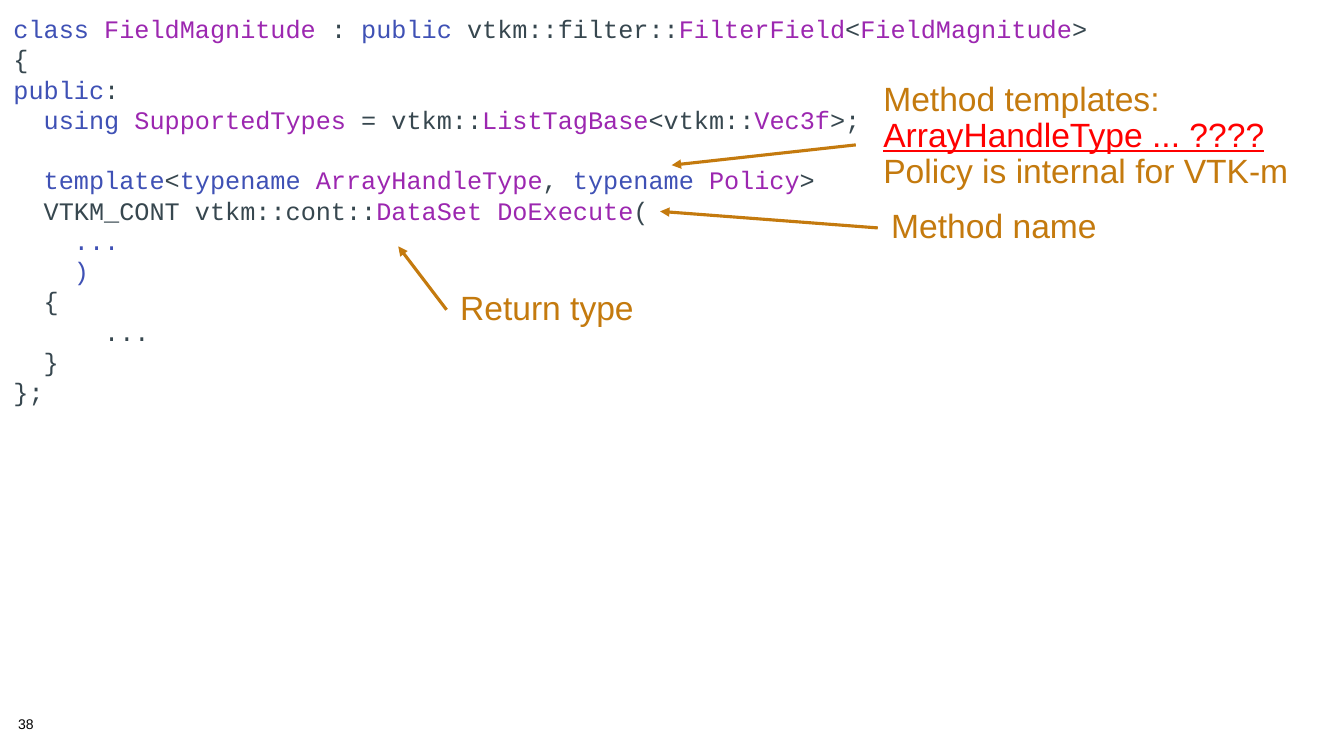
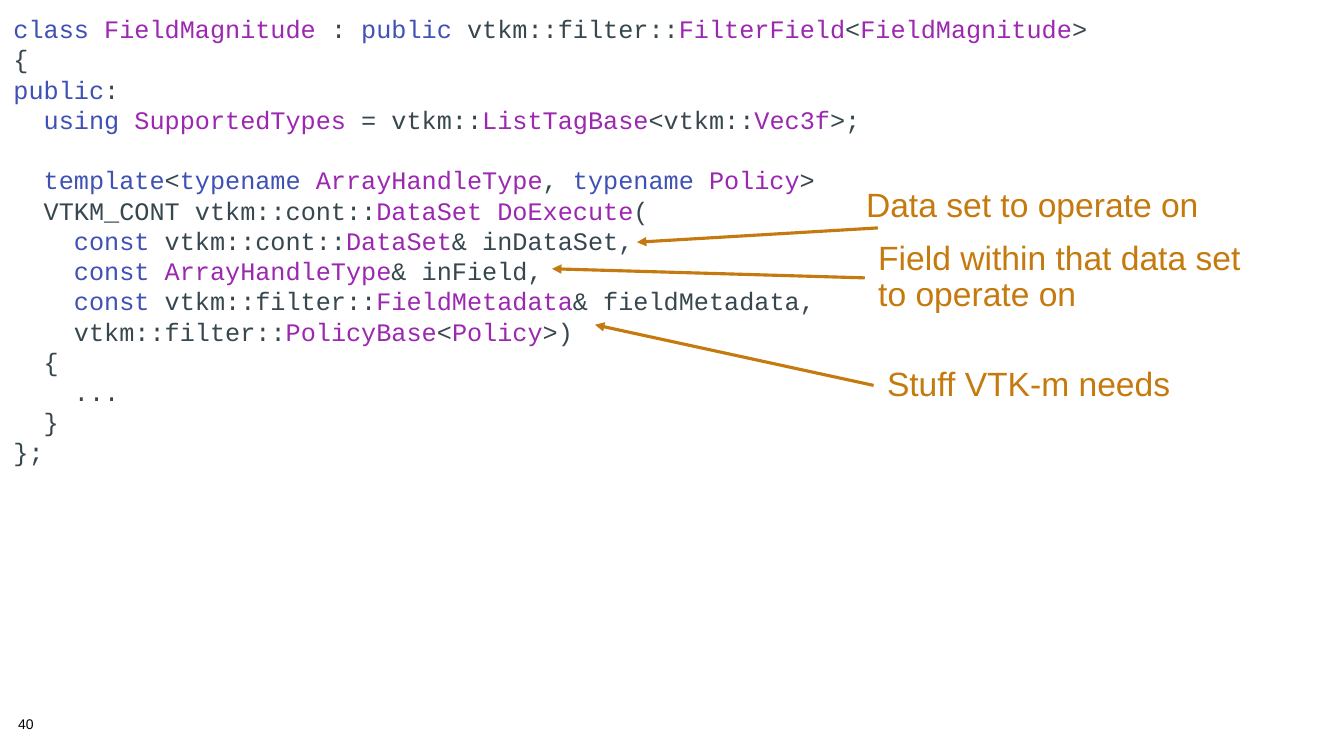
import itertools

import pptx
import pptx.dml.color
import pptx.enum.shapes
import pptx.enum.text
import pptx.oxml
import pptx.oxml.ns
import pptx.util
from lxml import etree

Pt = pptx.util.Pt
MSO_ANCHOR = pptx.enum.text.MSO_ANCHOR
qn = pptx.oxml.ns.qn

COLORS = {
    "paper": "FFFFFF",
    "ink": "000000",
    "keyword": "3F51B5",
    "name": "9C27B0",
    "plain": "37474F",
    "note": "C47A0E",
    "alert": "FF0000",
}
BODY_FONT, CODE_FONT = "Arial", "Courier New"
CODE_SIZE = 18
SLIDE_W, SLIDE_H = 960, 540

KEYWORDS = {"class", "public", "using", "template", "typename", "const"}
NAMES = {
    "FieldMagnitude", "FilterField", "SupportedTypes", "ListTagBase", "Vec3f",
    "ArrayHandleType", "Policy", "DataSet", "DoExecute", "FieldMetadata",
    "PolicyBase",
}

CLASS_HEAD = [
    "class FieldMagnitude : public vtkm::filter::FilterField<FieldMagnitude>",
    "{",
    "public:",
    "  using SupportedTypes = vtkm::ListTagBase<vtkm::Vec3f>;",
    "",
    "  template<typename ArrayHandleType, typename Policy>",
    "  VTKM_CONT vtkm::cont::DataSet DoExecute(",
]
CLASS_TAIL = ["  }", "};"]
ELIDED_ARGUMENTS = ["    ...", "    )"]
FULL_ARGUMENTS = [
    "    const vtkm::cont::DataSet& inDataSet,",
    "    const ArrayHandleType& inField,",
    "    const vtkm::filter::FieldMetadata& fieldMetadata,",
    "    vtkm::filter::PolicyBase<Policy>)",
]


def rgb(color):
    return pptx.dml.color.RGBColor.from_string(COLORS[color])


def write(p, text, size=24, color="note", font=BODY_FONT, underline=None):
    """Append one formatted run to a paragraph."""
    r = p.add_run()
    r.text = text
    r.font.size = Pt(size)
    r.font.name = font
    r.font.color.rgb = rgb(color)
    r.font.underline = underline


def paragraphs(tf, count):
    """Return the first paragraph of a frame and enough new ones after it."""
    return [tf.paragraphs[0]] + [tf.add_paragraph() for _ in range(count - 1)]


def set_frame(tf, inset_x, inset_y, anchor=MSO_ANCHOR.TOP):
    tf.word_wrap = True
    tf.vertical_anchor = anchor
    tf.margin_left = tf.margin_right = Pt(inset_x)
    tf.margin_top = tf.margin_bottom = Pt(inset_y)


def token_color(token):
    if token in KEYWORDS:
        return "keyword"
    return "name" if token in NAMES else "plain"


def highlight(line):
    """Yield (colour, text) pieces of a code line."""
    words = itertools.groupby(line, lambda ch: ch.isalnum() or ch == "_")
    tokens = ["".join(chars) for _, chars in words]
    for color, group in itertools.groupby(tokens, token_color):
        yield color, "".join(group)


def add_code(s, lines, height, keyword_lines=()):
    """Add the code panel; keyword_lines are coloured as a whole."""
    panel = s.shapes.add_shape(pptx.enum.shapes.MSO_SHAPE.RECTANGLE,
                               0, 0, Pt(SLIDE_W), Pt(height))
    panel.shadow.inherit = False
    panel.fill.solid()
    panel.fill.fore_color.rgb = rgb("paper")
    panel.line.fill.background()
    tf = panel.text_frame
    set_frame(tf, 9.6, 9.6)
    for p, line in zip(paragraphs(tf, len(lines)), lines):
        p.alignment = pptx.enum.text.PP_ALIGN.LEFT
        pieces = [("keyword", line)] if line in keyword_lines else highlight(line)
        for color, text in pieces:
            write(p, text, size=CODE_SIZE, color=color, font=CODE_FONT)
        if not line:
            end = etree.SubElement(p._p, qn("a:endParaRPr"), sz=str(CODE_SIZE * 100))
            etree.SubElement(end, qn("a:latin"), typeface=CODE_FONT)


def add_arrow(s, start, end):
    line = s.shapes.add_connector(pptx.enum.shapes.MSO_CONNECTOR.STRAIGHT,
                                  *(Pt(v) for v in (*start, *end)))
    line.line.color.rgb = rgb("note")
    line.line.width = Pt(2.25)
    etree.SubElement(line.line._get_or_add_ln(), qn("a:tailEnd"), type="triangle")
    etree.SubElement(line._element.spPr, qn("a:effectLst"))


def add_label(s, lines, left, top, width=292, height=41):
    """Add a callout; each line is a text and its format."""
    box = s.shapes.add_textbox(Pt(left), Pt(top), Pt(width), Pt(height))
    tf = box.text_frame
    set_frame(tf, 9.6, 7.2, MSO_ANCHOR.MIDDLE)
    for p, (text, style) in zip(paragraphs(tf, len(lines)), lines):
        p.line_spacing = 0.9
        write(p, text, **style)


def add_page_number(s, number):
    box = s.shapes.add_textbox(Pt(13), Pt(512.6), Pt(40), Pt(11.5))
    set_frame(box.text_frame, 0, 0)
    p = box.text_frame.paragraphs[0]
    p.line_spacing = 0.9
    write(p, str(number), size=10, color="ink")


def add_slide(prs, number):
    s = prs.slides.add_slide(prs.slide_layouts[6])
    add_page_number(s, number)
    return s


def signature_slide(prs):
    s = add_slide(prs, 38)
    add_code(s, CLASS_HEAD + ELIDED_ARGUMENTS + ["  {", "      ..."] + CLASS_TAIL,
             303, keyword_lines=ELIDED_ARGUMENTS)
    add_label(s, [("Method name", {})], 627, 142.3)
    add_arrow(s, (627, 162.8), (471.5, 151))
    add_label(s, [
        ("Method templates:", {}),
        ("ArrayHandleType ... ????", {"color": "alert", "underline": True}),
        ("Policy is internal for VTK-m", {}),
    ], 621.3, 51, width=348, height=93)
    add_arrow(s, (611.3, 103.5), (479.8, 118))
    add_label(s, [("Return type", {})], 319, 200.7)
    add_arrow(s, (319, 221.3), (284.5, 176))


def arguments_slide(prs):
    s = add_slide(prs, 40)
    add_code(s, CLASS_HEAD + FULL_ARGUMENTS + ["  {", "    ..."] + CLASS_TAIL, 346)
    add_label(s, [("Data set to operate on", {})], 609, 127.3)
    add_arrow(s, (627, 162.8), (455, 173))
    add_label(s, [("Field within that data set to operate on", {})],
              617.7, 165, height=67)
    add_arrow(s, (617.7, 198.5), (394.3, 192))
    add_label(s, [("Stuff VTK-m needs", {})], 624, 255)
    add_arrow(s, (624, 275.3), (425, 232))


def main():
    prs = pptx.Presentation()
    prs.slide_width, prs.slide_height = Pt(SLIDE_W), Pt(SLIDE_H)
    signature_slide(prs)
    arguments_slide(prs)
    prs.save("out.pptx")


if __name__ == "__main__":
    main()
